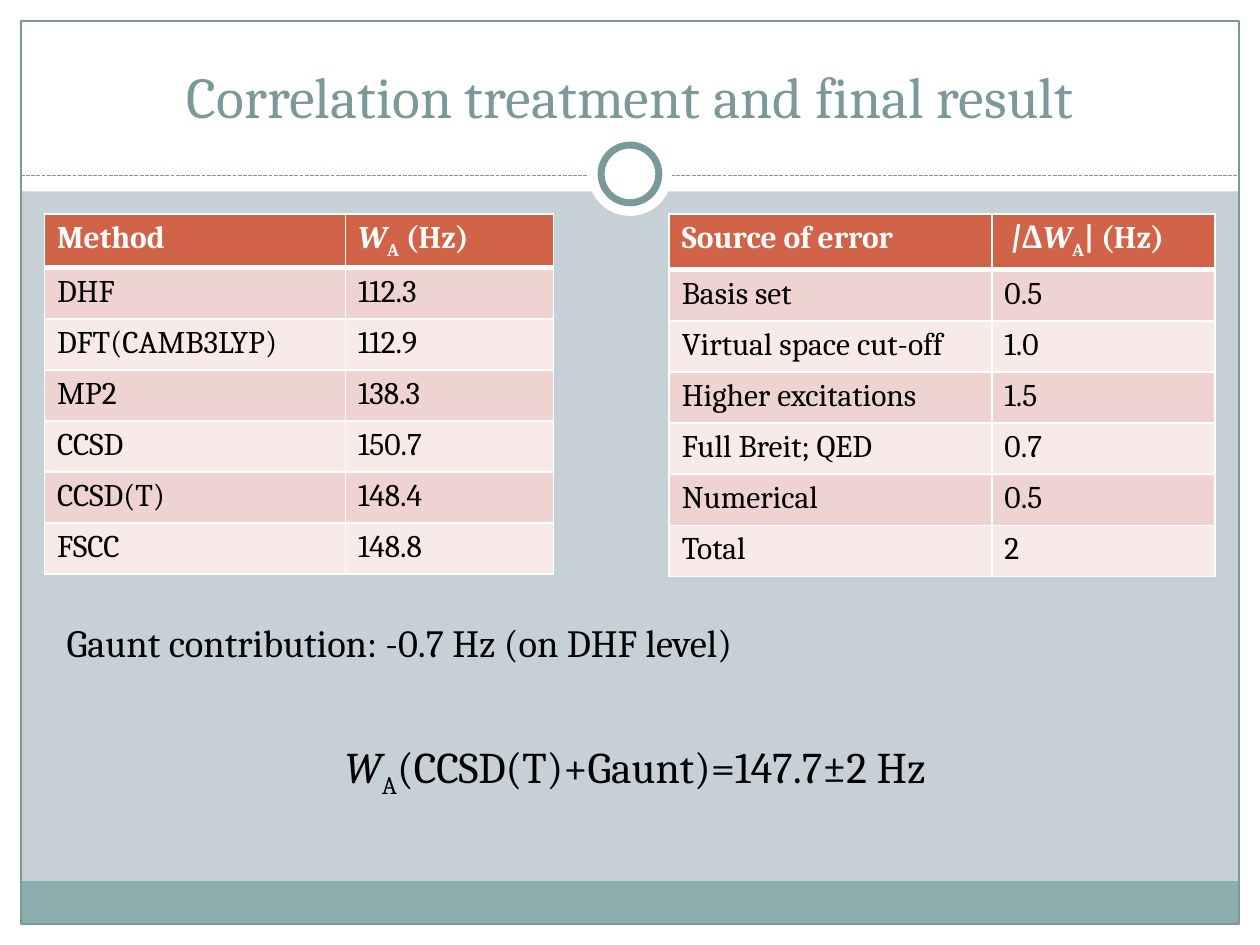
from dataclasses import dataclass

from lxml import etree
from pptx import Presentation
from pptx.dml.color import RGBColor
from pptx.enum.dml import MSO_LINE
from pptx.enum.shapes import MSO_CONNECTOR, MSO_SHAPE
from pptx.enum.text import MSO_ANCHOR, MSO_AUTO_SIZE, PP_ALIGN
from pptx.oxml.ns import qn
from pptx.util import Pt

RECT, OVAL = MSO_SHAPE.RECTANGLE, MSO_SHAPE.OVAL
LINE, DASH = MSO_CONNECTOR.STRAIGHT, MSO_LINE.SQUARE_DOT
BOTTOM, CENTER = MSO_ANCHOR.BOTTOM, PP_ALIGN.CENTER
FIT, FIXED = MSO_AUTO_SIZE.SHAPE_TO_FIT_TEXT, MSO_AUTO_SIZE.NONE
TITLE_ONLY = 5


@dataclass(frozen=True)
class Theme:
    font: str = "Cambria"
    back: str = "C5D1D7"
    white: str = "FFFFFF"
    black: str = "000000"
    edge: str = "7C999A"
    foot: str = "8CADAE"
    head: str = "D16349"
    bands: tuple = ("EED3D0", "F7EAE9")
    title: float = 33
    cell: float = 18
    note: float = 22
    final: float = 25


THEME = Theme()

# Each text is a list of (words, style) runs
W_A = [("W", "italic"), ("A", "sub")]
METHODS = [
    ([("Method", "")], W_A + [(" (Hz)", "")]),
    ("DHF", "112.3"),
    ("DFT(CAMB3LYP)", "112.9"),
    ("MP2", "138.3"),
    ("CCSD", "150.7"),
    ("CCSD(T)", "148.4"),
    ("FSCC", "148.8"),
]
ERRORS = [
    ([("Source of error", "")],
     [(" |", "italic"), ("Δ", "")] + W_A + [("| (Hz)", "")]),
    ("Basis set", "0.5"),
    ("Virtual space cut-off", "1.0"),
    ("Higher excitations", "1.5"),
    ("Full Breit; QED", "0.7"),
    ("Numerical", "0.5"),
    ("Total", "2"),
]


def rgb(code):
    return RGBColor.from_string(code)


def add_runs(para, runs, size, color, bold=False):
    if isinstance(runs, str):
        runs = [(runs, "")]
    for words, style in runs:
        run = para.add_run()
        run.text = words
        font = run.font
        font.name, font.size, font.bold = THEME.font, Pt(size), bold
        font.italic = style == "italic"
        font.color.rgb = rgb(color)
        if style == "sub":
            font._element.set("baseline", "-25000")


def add_form(slide, kind, box, fill=None, line=None, width=0.75):
    form = slide.shapes.add_shape(kind, *map(Pt, box))
    form.shadow.inherit = False
    if fill:
        form.fill.solid()
        form.fill.fore_color.rgb = rgb(fill)
    else:
        form.fill.background()
    if line:
        form.line.color.rgb = rgb(line)
        form.line.width = Pt(width)
    else:
        form.line.fill.background()


def add_frame(slide, box):
    x, y, wide, high = box
    rim, top = 12, 109.4
    right, low = x + wide - rim, y + high - rim
    # White margins and header
    for band in ((x, low, wide, rim), (x, y, wide, top),
                 (x, y, rim, high), (right, y, rim, high)):
        add_form(slide, RECT, band, THEME.white)
    # Footer band and outline
    inner = wide - 2 * rim
    add_form(slide, RECT, (x + rim, low - 24.5, inner, 24.5), THEME.foot)
    add_form(slide, RECT, (x + rim, y + rim, inner, high - 2 * rim),
             line=THEME.edge)
    # Dashed rule
    level = y + 100.5
    rule = slide.shapes.add_connector(
        LINE, Pt(x + rim), Pt(level), Pt(right), Pt(level))
    rule.line.color.rgb = rgb(THEME.edge)
    rule.line.width = Pt(0.75)
    rule.line.dash_style = DASH
    etree.SubElement(rule.line._get_or_add_ln().getparent(), qn("a:effectLst"))
    # Ring over the rule
    mid, ring = x + wide / 2, y + 99.4
    for size, line in ((48, None), (33, THEME.edge)):
        add_form(slide, OVAL, (mid - size / 2, ring - size / 2, size, size),
                 THEME.white, line, 4)


def add_title(slide, box, words):
    title = slide.shapes.title
    title.left, title.top, title.width, title.height = map(Pt, box)
    frame = title.text_frame
    frame.word_wrap, frame.auto_size = True, FIXED
    frame.vertical_anchor = BOTTOM
    para = frame.paragraphs[0]
    para.alignment = CENTER
    add_runs(para, words, THEME.title, THEME.edge)
    # Lift the title above the header band
    title.element.getparent().append(title.element)


def add_edges(cell, foot):
    props = cell._tc.get_or_add_tcPr()
    widths = {"lnL": 1, "lnR": 1, "lnT": 1, "lnB": foot}
    for spot, (tag, width) in enumerate(widths.items()):
        edge = etree.Element(qn("a:" + tag), w=str(Pt(width)))
        fill = etree.SubElement(edge, qn("a:solidFill"))
        etree.SubElement(fill, qn("a:srgbClr"), val=THEME.white)
        props.insert(spot, edge)


def add_grid(slide, box, rows, first):
    x, y, wide, high = box
    grid = slide.shapes.add_table(
        len(rows), 2, Pt(x), Pt(y), Pt(wide), Pt(high)).table
    for col, width in zip(grid.columns, (first, wide - first)):
        col.width = Pt(width)
    for i, row in enumerate(rows):
        grid.rows[i].height = Pt(high / len(rows))
        top = i == 0
        for j, runs in enumerate(row):
            cell = grid.cell(i, j)
            cell.fill.solid()
            cell.fill.fore_color.rgb = rgb(
                THEME.head if top else THEME.bands[(i - 1) % 2])
            add_runs(cell.text_frame.paragraphs[0], runs, THEME.cell,
                     THEME.white if top else THEME.black, top)
            add_edges(cell, 3 if top else 1)


def add_note(slide, box, runs, size):
    frame = slide.shapes.add_textbox(*map(Pt, box)).text_frame
    frame.word_wrap, frame.auto_size = False, FIT
    add_runs(frame.paragraphs[0], runs, size, THEME.black)


def main():
    deck = Presentation()
    deck.slide_width, deck.slide_height = Pt(720), Pt(540)
    slide = deck.slides.add_slide(deck.slide_layouts[TITLE_ONLY])
    slide.background.fill.solid()
    slide.background.fill.fore_color.rgb = rgb(THEME.back)

    add_frame(slide, (0, 0, 720, 540))
    add_title(slide, (24, 18, 672, 60),
              "Correlation treatment and final result")
    add_grid(slide, (25.4, 122.4, 290.8, 204.4), METHODS, 172)
    add_note(slide, (31, 350, 439, 34),
             "Gaunt contribution: -0.7 Hz (on DHF level)", THEME.note)
    add_grid(slide, (382.4, 122.4, 312, 204.4), ERRORS, 184.4)
    add_note(slide, (190, 419, 397, 37.5),
             W_A + [("(CCSD(T)+Gaunt)=147.7±2 Hz", "")], THEME.final)
    deck.save("out.pptx")


if __name__ == "__main__":
    main()
